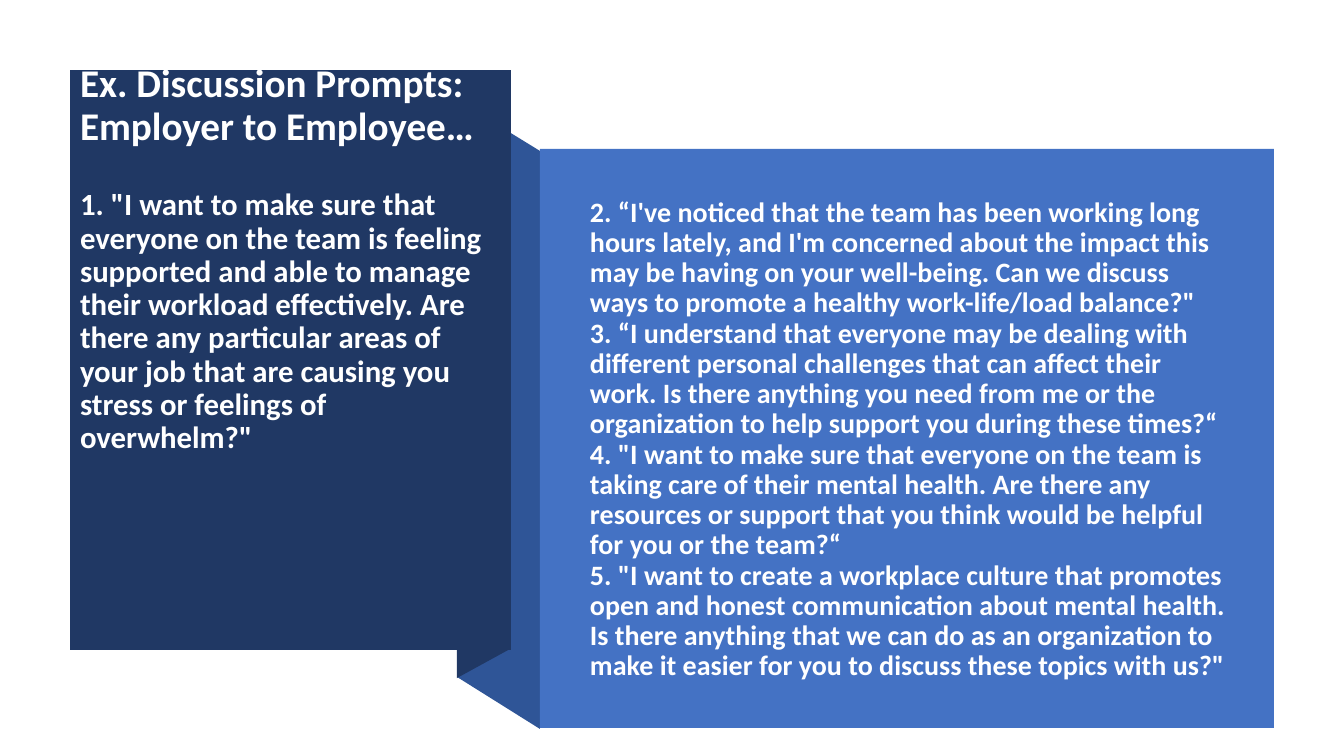
from dataclasses import dataclass

import pptx
import pptx.dml.color
import pptx.enum.shapes
import pptx.enum.text
import pptx.util

PX = 914400 / 100.8
FONT = {"name": "Calibri", "bold": True}
NAVY, MID_BLUE, BLUE, WHITE = "203864", "2F5597", "4472C4", "FFFFFF"


@dataclass
class Fold:
    points: list[tuple[int, int]]
    color: str


@dataclass
class Panel:
    box: tuple[int, int, int, int]
    color: str


@dataclass
class Para:
    text: str
    size: int
    before: int = 0


@dataclass
class TextBlock:
    box: tuple[int, int, int, int]
    paras: list[Para]


FOLDS = [
    Fold([(540, 729), (457, 677), (457, 100), (540, 151)], MID_BLUE),
    Fold([(510, 649), (457, 678), (457, 99), (510, 70)], NAVY),
]
PANELS = [
    Panel((70, 70, 441, 580), NAVY),
    Panel((540, 149, 734, 579), BLUE),
]
PROMPTS = [
    "2. “I've noticed that the team has been working long hours lately, and I'm concerned about the impact this may be having on your well-being. Can we discuss ways to promote a healthy work-life/load balance?\"",
    "3. “I understand that everyone may be dealing with different personal challenges that can affect their work. Is there anything you need from me or the organization to help support you during these times?“",
    "4. \"I want to make sure that everyone on the team is taking care of their mental health. Are there any resources or support that you think would be helpful for you or the team?“",
    "5. \"I want to create a workplace culture that promotes open and honest communication about mental health. Is there anything that we can do as an organization to make it easier for you to discuss these topics with us?\"",
]
TEXTS = [
    TextBlock((80, 64, 421, 400), [
        Para("Ex. Discussion Prompts: Employer to Employee…", 28),
        Para("1. \"I want to make sure that everyone on the team is feeling supported and able to manage their workload effectively. Are there any particular areas of your job that are causing you stress or feelings of overwhelm?\"", 22, 29),
    ]),
    TextBlock((590, 198, 637, 490), [Para(text, 20) for text in PROMPTS]),
]


def px(n: int) -> int:
    return round(n * PX)


def rgb(color: str) -> pptx.dml.color.RGBColor:
    return pptx.dml.color.RGBColor.from_string(color)


def paint(sp, color: str) -> None:
    sp.fill.solid()
    sp.fill.fore_color.rgb = rgb(color)
    sp.line.fill.background()
    sp.shadow.inherit = False


def draw_fold(s, fold: Fold) -> None:
    builder = s.shapes.build_freeform(*fold.points[0], scale=PX)
    builder.add_line_segments(fold.points[1:], close=True)
    paint(builder.convert_to_shape(), fold.color)


def draw_panel(s, panel: Panel) -> None:
    rect = pptx.enum.shapes.MSO_SHAPE.RECTANGLE
    paint(s.shapes.add_shape(rect, *map(px, panel.box)), panel.color)


def draw_text(s, block: TextBlock) -> None:
    tf = s.shapes.add_textbox(*map(px, block.box)).text_frame
    frame = {"word_wrap": True, "vertical_anchor": pptx.enum.text.MSO_ANCHOR.TOP,
             "margin_left": 0, "margin_right": 0, "margin_top": 0, "margin_bottom": 0}
    for name, value in frame.items():
        setattr(tf, name, value)
    for i, para in enumerate(block.paras):
        p = tf.add_paragraph() if i else tf.paragraphs[0]
        p.line_spacing = 0.9
        p.space_before = pptx.util.Pt(para.before)
        r = p.add_run()
        r.text = para.text
        for name, value in (FONT | {"size": pptx.util.Pt(para.size)}).items():
            setattr(r.font, name, value)
        r.font.color.rgb = rgb(WHITE)


def main() -> None:
    prs = pptx.Presentation()
    prs.slide_width, prs.slide_height = px(1344), px(756)
    s = prs.slides.add_slide(prs.slide_layouts[6])
    for fold in FOLDS:
        draw_fold(s, fold)
    for panel in PANELS:
        draw_panel(s, panel)
    for block in TEXTS:
        draw_text(s, block)
    prs.save("out.pptx")


if __name__ == "__main__":
    main()
